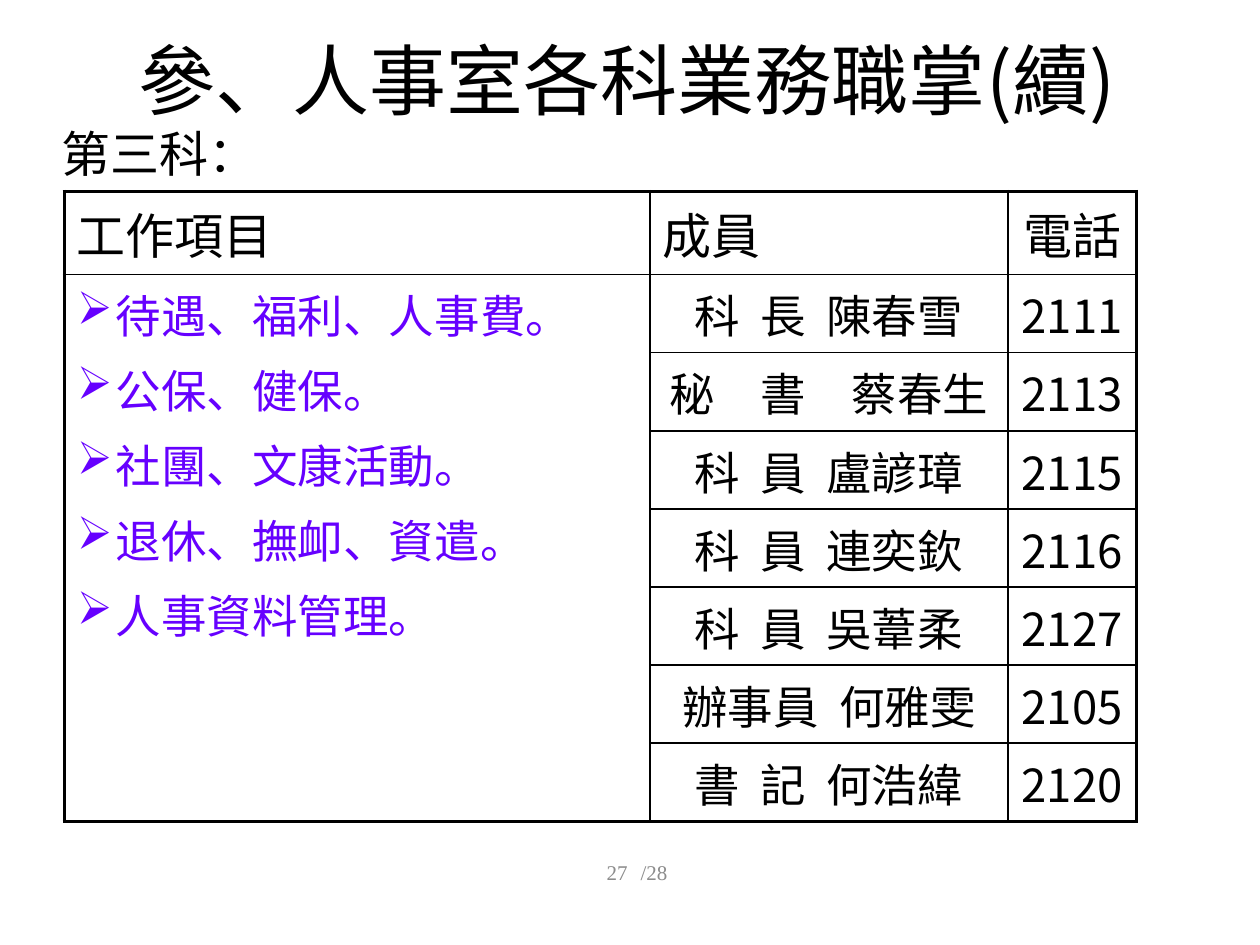
from lxml.etree import SubElement as Sub
from pptx import Presentation
from pptx.dml.color import RGBColor as Rgb
from pptx.enum.text import MSO_ANCHOR as Anchor, PP_ALIGN as Align
from pptx.oxml.ns import qn
from pptx.util import Inches, Pt

HUES = {"ink": "000000", "duty": "6600FF", "page": "8C8C8C"}
SANS, SERIF = "Noto Sans CJK SC", "Times New Roman"
HEADS = ["工作項目", "成員", "電話"]
DUTIES = ["待遇、福利、人事費。", "公保、健保。", "社團、文康活動。",
          "退休、撫卹、資遣。", "人事資料管理。"]
STAFF = [("科  長  陳春雪", "2111"), ("秘　書　蔡春生", "2113"),
         ("科  員  盧諺璋", "2115"), ("科  員  連奕欽", "2116"),
         ("科  員  吳葦柔", "2127"), ("辦事員  何雅雯", "2105"),
         ("書  記  何浩緯", "2120")]
COLS = [4.65, 2.84, 1.02]
HEAD, ROW = 0.66, 0.62


class Deck:
    def __init__(self):
        self.prs = Presentation()
        self.prs.slide_width, self.prs.slide_height = Inches(10), Inches(7.5)
        self.slide = self.prs.slides.add_slide(self.prs.slide_layouts[6])

    def text(self, par, words, size, hue="ink", face=SANS, align=Align.LEFT):
        par.alignment = align
        run = par.add_run()
        run.text = words
        for key, val in {"name": face, "size": Pt(size)}.items():
            setattr(run.font, key, val)
        run.font.color.rgb = Rgb.from_string(HUES[hue])
        Sub(run.font._element, qn("a:ea"), typeface=SANS)

    def label(self, words, box, size, **look):
        frame = self.slide.shapes.add_textbox(*map(Inches, box)).text_frame
        frame.word_wrap = True
        frame.vertical_anchor = Anchor.MIDDLE
        self.text(frame.paragraphs[0], words, size, **look)

    def bullet(self, par):
        props = par._p.get_or_add_pPr()
        props.set("marL", str(Inches(0.31)))
        props.set("indent", str(Inches(-0.31)))
        Sub(props, qn("a:buChar"), char="➢")

    def edge(self, cell, sides):
        """Draw the cell's borders; sides maps L, R, T, B to whether it is outer."""
        props = cell._tc.get_or_add_tcPr()
        for side, outer in sides.items():
            line = Sub(props, qn("a:ln" + side), w=str(Pt(2.25 if outer else 1)))
            fill = Sub(line, qn("a:solidFill"))
            Sub(fill, qn("a:srgbClr"), val=HUES["ink"])
        cell.fill.background()

    def grid(self, left, top, cols, rows):
        """Add a bordered table whose first column is merged below its head."""
        size = (left, top, sum(cols), sum(rows))
        table = self.slide.shapes.add_table(
            len(rows), len(cols), *map(Inches, size)).table
        table.first_row = table.horz_banding = False
        for col, wide in zip(table.columns, cols):
            col.width = Inches(wide)
        for row, high in zip(table.rows, rows):
            row.height = Inches(high)
        table.cell(1, 0).merge(table.cell(len(rows) - 1, 0))
        for r in range(len(rows)):
            for c in range(len(cols)):
                cell = table.cell(r, c)
                self.edge(cell, {"L": c == 0, "R": c == len(cols) - 1, "T": r == 0,
                                 "B": r + cell.span_height == len(rows)})
        return table

    def duties(self, cell, items):
        frame = cell.text_frame
        for i, words in enumerate(items):
            par = frame.add_paragraph() if i else frame.paragraphs[0]
            if i:
                par.space_before = Pt(5.2)
            self.bullet(par)
            self.text(par, words, 26, "duty", align=Align.JUSTIFY)


def main():
    deck = Deck()
    deck.label("參、人事室各科業務職掌(續)", (0.73, 0, 8.5, 1.25), 44,
               align=Align.CENTER)
    table = deck.grid(0.51, 1.52, COLS, [HEAD] + [ROW] * len(STAFF))
    for c, words in enumerate(HEADS):
        deck.text(table.cell(0, c).text_frame.paragraphs[0], words, 28,
                  align=Align.CENTER if c == 2 else Align.JUSTIFY)
    deck.duties(table.cell(1, 0), DUTIES)
    for r, person in enumerate(STAFF, 1):
        for c, words in enumerate(person, 1):
            deck.text(table.cell(r, c).text_frame.paragraphs[0], words, 26,
                      align=Align.CENTER)
    deck.label("第三科：", (0.39, 1.05, 8.5, 0.32), 28, face=SERIF)
    foot = {"size": 12, "hue": "page", "face": SERIF}
    deck.label("27", (2.83, 6.72, 2.25, 0.4), align=Align.RIGHT, **foot)
    deck.label("/28", (3.5, 6.72, 3.38, 0.4), align=Align.CENTER, **foot)
    deck.prs.save("out.pptx")


if __name__ == "__main__":
    main()
